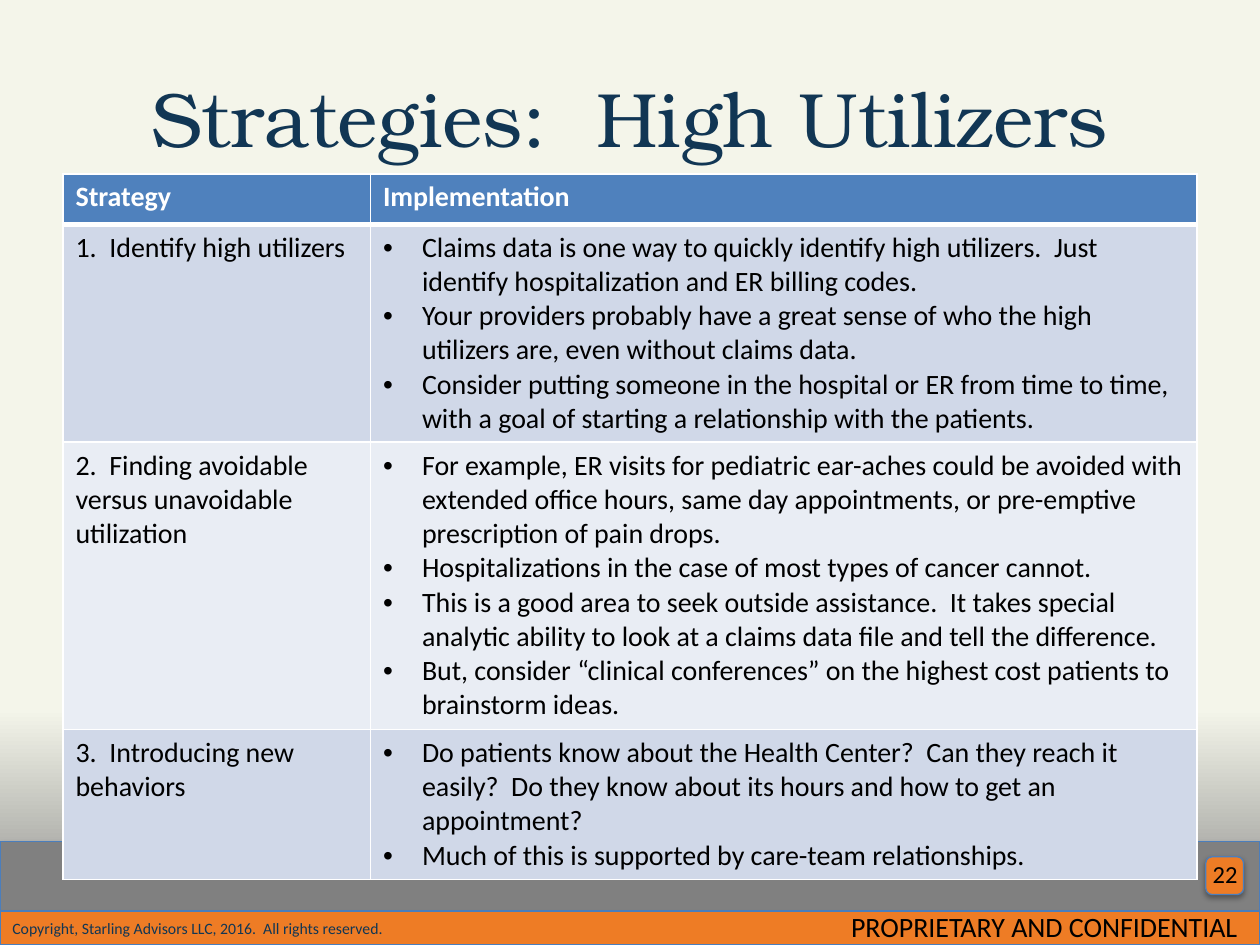
from pptx import Presentation
from pptx.dml.color import RGBColor
from pptx.enum.shapes import MSO_SHAPE as SHAPE
from pptx.enum.text import MSO_ANCHOR as ANCHOR, PP_ALIGN as ALIGN
from pptx.oxml import parse_xml
from pptx.oxml.ns import nsdecls
from pptx.util import Emu, Inches, Pt

NAVY, ORANGE, GRAY, WHITE, BLACK = "113654", "EE7C25", "808080", "FFFFFF", "000000"
HEADER, BANDS = "4F81BD", ("D0D8E8", "E9EDF4")
ROWS = [
    ("1.  Identify high utilizers", [
        "Claims data is one way to quickly identify high utilizers.  Just identify hospitalization and ER billing codes.",
        "Your providers probably have a great sense of who the high utilizers are, even without claims data.",
        "Consider putting someone in the hospital or ER from time to time, with a goal of starting a relationship with the patients.",
    ]),
    ("2.  Finding avoidable versus unavoidable utilization", [
        "For example, ER visits for pediatric ear-aches could be avoided with extended office hours, same day appointments, or pre-emptive prescription of pain drops.",
        "Hospitalizations in the case of most types of cancer cannot.",
        "This is a good area to seek outside assistance.  It takes special analytic ability to look at a claims data file and tell the difference.",
        "But, consider “clinical conferences” on the highest cost patients to brainstorm ideas.",
    ]),
    ("3.  Introducing new behaviors", [
        "Do patients know about the Health Center?  Can they reach it easily?  Do they know about its hours and how to get an appointment?",
        "Much of this is supported by care-team relationships.",
    ]),
]


def rgb(value):
    """Return the colour for a hex string."""
    return RGBColor.from_string(value)


def xml(tag, attrs, body=""):
    """Return a DrawingML element."""
    return parse_xml(f"<a:{tag} {nsdecls('a')} {attrs}>{body}</a:{tag}>")


def write(tf, *lines, size=16, color=BLACK, font="Calibri", bold=False,
          align=ALIGN.LEFT, anchor=ANCHOR.TOP, bullet=False):
    """Fill a text frame or table cell with one paragraph per line."""
    tf.word_wrap = True
    tf.vertical_anchor = anchor
    for i, line in enumerate(lines):
        p = tf.add_paragraph() if i else tf.paragraphs[0]
        p.alignment = align
        if bullet:
            pPr = p._p.get_or_add_pPr()
            indent = Inches(0.31)
            pPr.set("marL", str(indent))
            pPr.set("indent", str(-indent))
            pPr.append(xml("buFont", 'typeface="Arial"'))
            pPr.append(xml("buChar", 'char="•"'))
        r = p.add_run()
        r.text = line
        r.font.size, r.font.name, r.font.bold = Pt(size), font, bold
        r.font.color.rgb = rgb(color)


def add_text(s, box, text, **fmt):
    """Add a text box."""
    tb = s.shapes.add_textbox(*box)
    write(tb.text_frame, text, **fmt)
    return tb


def add_panel(s, kind, box, fill):
    """Add a filled, outlined shape with a soft shadow."""
    sp = s.shapes.add_shape(kind, *box)
    sp.fill.solid()
    sp.fill.fore_color.rgb = rgb(fill)
    sp.line.color.rgb = rgb("4B7EBC")
    sp.line.width = Pt(0.75)
    sp.shadow.inherit = False
    sp._element.spPr.find("{*}effectLst").append(xml(
        "outerShdw", f'blurRad="{Pt(3.1)}" dist="{Pt(1.8)}" dir="5400000" rotWithShape="0"',
        '<a:srgbClr val="000000"><a:alpha val="35000"/></a:srgbClr>'))
    return sp


def add_background(s):
    """Fade the slide from cream to gray at the bottom."""
    fill = s.background.fill
    fill.gradient()
    fill.gradient_angle = 270
    for stop, (position, color) in zip(fill.gradient_stops, [(0.75, "F4F5EA"), (1, GRAY)]):
        stop.position = position
        stop.color.rgb = rgb(color)


def add_footer(s, left, top, width, height):
    """Draw the footer bands, copyright, page number and notice."""
    right = left + width
    strip = Inches(0.27)
    add_panel(s, SHAPE.RECTANGLE, (left, top, width, height), GRAY)
    bar = add_panel(s, SHAPE.RECTANGLE, (left, top + height - strip, width, strip), ORANGE)
    write(bar.text_frame, "Copyright, Starling Advisors LLC, 2016.  All rights reserved.",
          size=9, color=NAVY, anchor=ANCHOR.MIDDLE)
    add_panel(s, SHAPE.ROUNDED_RECTANGLE,
              (right - Inches(0.43), top + Inches(0.12), Inches(0.3), Inches(0.3)), ORANGE)
    add_text(s, (right - Inches(0.6), top + Inches(0.09), Inches(0.52), Inches(0.4)),
             "22", size=14, align=ALIGN.RIGHT)
    add_text(s, (right - Inches(4.56), top + Inches(0.49), Inches(4.48), Inches(0.37)),
             "PROPRIETARY AND CONFIDENTIAL", align=ALIGN.RIGHT)


def style_cell(cell, fill, top=1, bottom=1):
    """Give a cell its fill and white borders."""
    tcPr = cell._tc.get_or_add_tcPr()
    for side, width in zip("LRTB", (1, 1, top, bottom)):
        tcPr.append(xml(f"ln{side}", f'w="{Pt(width)}"',
                        f'<a:solidFill><a:srgbClr val="{WHITE}"/></a:solidFill>'))
    cell.fill.solid()
    cell.fill.fore_color.rgb = rgb(fill)


def write_cell(cell, *lines, **fmt):
    """Write text at the top of a cell."""
    write(cell.text_frame, *lines, **fmt)
    cell.vertical_anchor = ANCHOR.TOP


def add_strategy_table(s, left, top, width, height):
    """Add the table of strategies and their implementation."""
    table = s.shapes.add_table(len(ROWS) + 1, 2, left, top, width, height).table
    first = Inches(2.44)
    table.columns[0].width, table.columns[1].width = first, Emu(width - first)
    for row, h in zip(table.rows, (0.4, 1.73, 2.28, 1.19)):
        row.height = Inches(h)
    for c, heading in enumerate(("Strategy", "Implementation")):
        style_cell(table.cell(0, c), HEADER, bottom=3)
        write_cell(table.cell(0, c), heading, color=WHITE, bold=True)
    for i, (strategy, steps) in enumerate(ROWS):
        cells = table.cell(i + 1, 0), table.cell(i + 1, 1)
        for cell in cells:
            style_cell(cell, BANDS[i % 2], top=1 if i else 3)
        write_cell(cells[0], strategy)
        write_cell(cells[1], *steps, bullet=True)


def main():
    """Build and save the slide."""
    prs = Presentation()
    prs.slide_width, prs.slide_height = Inches(10), Inches(7.5)
    s = prs.slides.add_slide(prs.slide_layouts[6])
    add_background(s)
    add_footer(s, Inches(0), Inches(6.68), Inches(10), Inches(0.82))
    add_text(s, (Inches(0.5), Inches(0.3), Inches(9), Inches(1.25)),
             "Strategies:  High Utilizers", size=44, color=NAVY, font="TeX Gyre Bonum",
             align=ALIGN.CENTER, anchor=ANCHOR.MIDDLE)
    add_strategy_table(s, Inches(0.5), Inches(1.38), Inches(9), Inches(5.6))
    prs.save("out.pptx")


if __name__ == "__main__":
    main()
